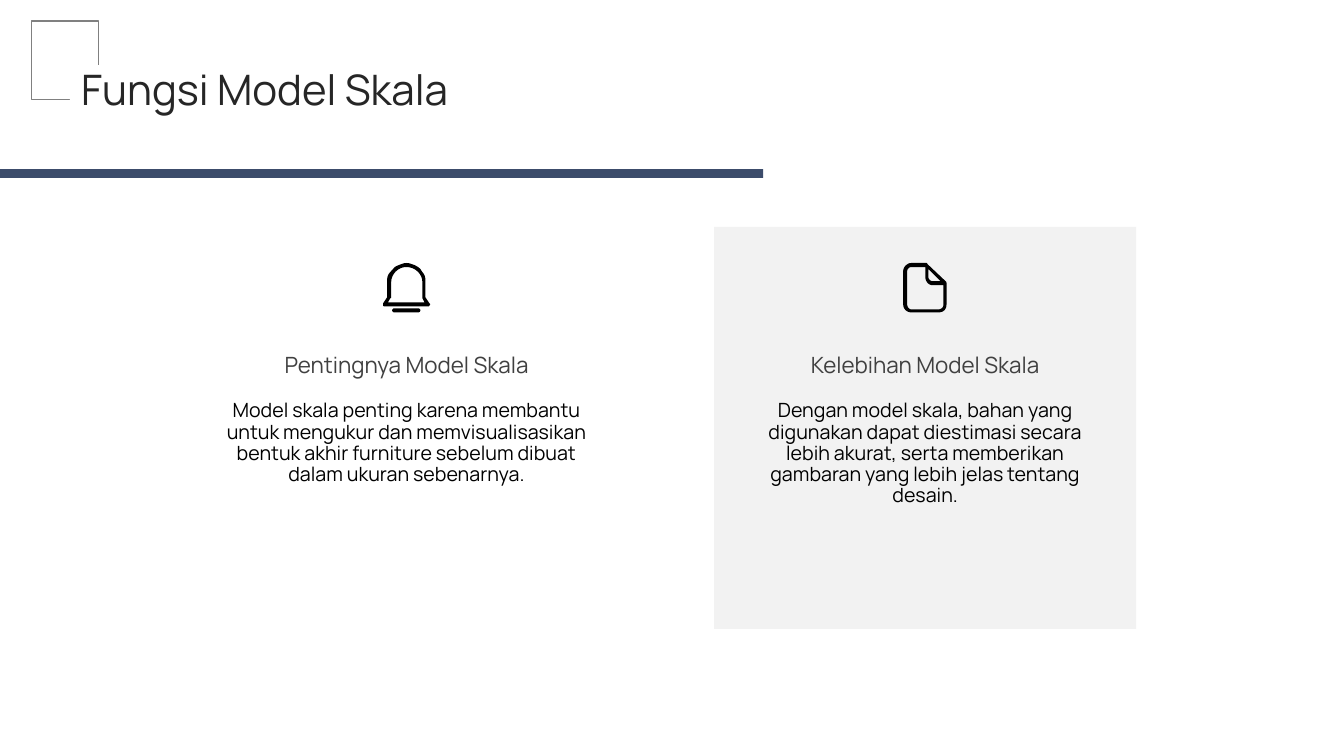
import pptx
import pptx.dml.color
import pptx.enum.shapes
import pptx.enum.text
import pptx.util

COLOURS = {
    "navy": "3C4C6B", "card": "F2F2F2", "white": "FFFFFF", "frame": "808080",
    "title": "262626", "heading": "404040", "black": "000000",
}
ALIGN = pptx.enum.text.PP_ALIGN
ANCHOR = pptx.enum.text.MSO_ANCHOR

BELL = [
    [(11, 45), (35, 45), (36, 45, 37, 46, 37, 47), (37, 48, 36, 49, 35, 49),
     (11, 49), (10, 49, 9, 48, 9, 47), (9, 46, 10, 45, 11, 45)],
    [(23, 4), (15, 4, 8, 11, 8, 19), (8, 34), (8, 34, 8, 35, 7, 35), (5, 39),
     (41, 39), (39, 35), (39, 35, 39, 35, 39, 34), (39, 19),
     (39, 11, 32, 4, 23, 4)],
    [(23, 0), (26, 0, 28, 1, 31, 2), (33, 3, 35, 4, 37, 6),
     (38, 8, 40, 10, 41, 12), (42, 14, 42, 17, 42, 19), (42, 34), (46, 40),
     (47, 41, 47, 41, 46, 42), (46, 43, 45, 43, 45, 43), (2, 43),
     (1, 43, 0, 43, 0, 42), (0, 41, 0, 41, 0, 40), (4, 34), (4, 19),
     (4, 17, 4, 14, 5, 12), (6, 10, 8, 8, 10, 6), (11, 4, 13, 3, 16, 2),
     (18, 1, 21, 0, 23, 0)],
]
DOCUMENT = [
    [(43, 20), (43, 19, 43, 19, 42, 18), (24, 1), (24, 0, 23, 0, 23, 0), (8, 0),
     (4, 0, 0, 4, 0, 8), (0, 41), (0, 46, 4, 49, 8, 49), (35, 49),
     (40, 49, 43, 46, 43, 41)],
    [(25, 14), (25, 6), (37, 18), (29, 18), (27, 18, 25, 16, 25, 14)],
    [(40, 41), (40, 44, 38, 46, 35, 46), (8, 46), (6, 46, 4, 44, 4, 41), (4, 8),
     (4, 6, 6, 4, 8, 4), (22, 4), (22, 14), (22, 18, 25, 22, 29, 22), (40, 22)],
]
COLUMNS = [
    (211, 391, 383, BELL, "Pentingnya Model Skala",
     "Model skala penting karena membantu untuk mengukur dan memvisualisasikan "
     "bentuk akhir furniture sebelum dibuat dalam ukuran sebenarnya."),
    (736, 378, 903, DOCUMENT, "Kelebihan Model Skala",
     "Dengan model skala, bahan yang digunakan dapat diestimasi secara lebih "
     "akurat, serta memberikan gambaran yang lebih jelas tentang desain."),
]


class SlideBuilder:
    """Draws styled elements on one slide, measured in px."""

    font = "Manrope"
    scale = 914400 / 100.8
    icon_unit = 9144
    curve_steps = 8

    def __init__(self, deck):
        self.page = deck.slides.add_slide(deck.slide_layouts[6])

    def px(self, *lengths):
        return [pptx.util.Emu(round(length * self.scale)) for length in lengths]

    def colour(self, name):
        return pptx.dml.color.RGBColor.from_string(COLOURS[name])

    def paint(self, shape, fill=None, line=None):
        shape.shadow.inherit = False
        if fill:
            shape.fill.solid()
            shape.fill.fore_color.rgb = self.colour(fill)
        else:
            shape.fill.background()
        if line:
            shape.line.color.rgb = self.colour(line)
            shape.line.width = pptx.util.Pt(0.75)
        else:
            shape.line.fill.background()

    def rectangle(self, left, top, width, height, fill=None, line=None):
        shape = self.page.shapes.add_shape(
            pptx.enum.shapes.MSO_SHAPE.RECTANGLE,
            *self.px(left, top, width, height))
        self.paint(shape, fill, line)

    def text(self, left, top, width, height, words, size, colour,
             align=ALIGN.CENTER, anchor=ANCHOR.TOP, inset=True, spacing=None):
        box = self.page.shapes.add_textbox(*self.px(left, top, width, height))
        frame = box.text_frame
        frame.word_wrap = True
        frame.vertical_anchor = anchor
        if not inset:
            frame.margin_left = frame.margin_right = 0
            frame.margin_top = frame.margin_bottom = 0
        para = frame.paragraphs[0]
        para.text = words
        para.alignment = align
        para.line_spacing = spacing
        para.font.name = self.font
        para.font.size = pptx.util.Pt(size)
        para.font.color.rgb = self.colour(colour)

    def outline(self, contour):
        points = [contour[0]]
        for segment in contour[1:]:
            if len(segment) == 2:
                points.append(segment)
                continue
            start = points[-1]
            for step in range(1, self.curve_steps + 1):
                t = step / self.curve_steps
                u = 1 - t
                points.append(tuple(
                    u ** 3 * start[axis] + 3 * u * u * t * segment[axis]
                    + 3 * u * t * t * segment[axis + 2] + t ** 3 * segment[axis + 4]
                    for axis in (0, 1)))
        return points

    def icon(self, left, top, contours):
        origin = self.px(left, top)
        builder = None
        for contour in contours:
            points = [(origin[0] + x * self.icon_unit, origin[1] + y * self.icon_unit)
                      for x, y in self.outline(contour)]
            if builder is None:
                builder = self.page.shapes.build_freeform(*points[0])
            else:
                builder.move_to(*points[0])
            builder.add_line_segments(points[1:], close=True)
        self.paint(builder.convert_to_shape(), "black")


def main():
    deck = pptx.Presentation()
    deck.slide_width = pptx.util.Inches(13.33)
    deck.slide_height = pptx.util.Inches(7.5)
    slide = SlideBuilder(deck)
    slide.rectangle(0, 169, 763, 9, fill="navy")
    slide.rectangle(714, 227, 422, 402, fill="card")
    for left, width, icon_left, contours, heading, body in COLUMNS:
        slide.text(left, 396, width, 198, body, 14, "black", spacing=0.9)
        slide.text(left, 349, width, 29, heading, 16, "heading",
                   anchor=ANCHOR.BOTTOM, inset=False, spacing=0.9)
        slide.icon(icon_left, 263, contours)
    slide.rectangle(32, 21, 67, 79, line="frame")
    slide.rectangle(70, 65, 62, 51, fill="white")
    slide.text(81, 69, 1119, 46, "Fungsi Model Skala", 30, "title",
               align=ALIGN.LEFT, inset=False, spacing=0.9)
    deck.save("out.pptx")


if __name__ == "__main__":
    main()
